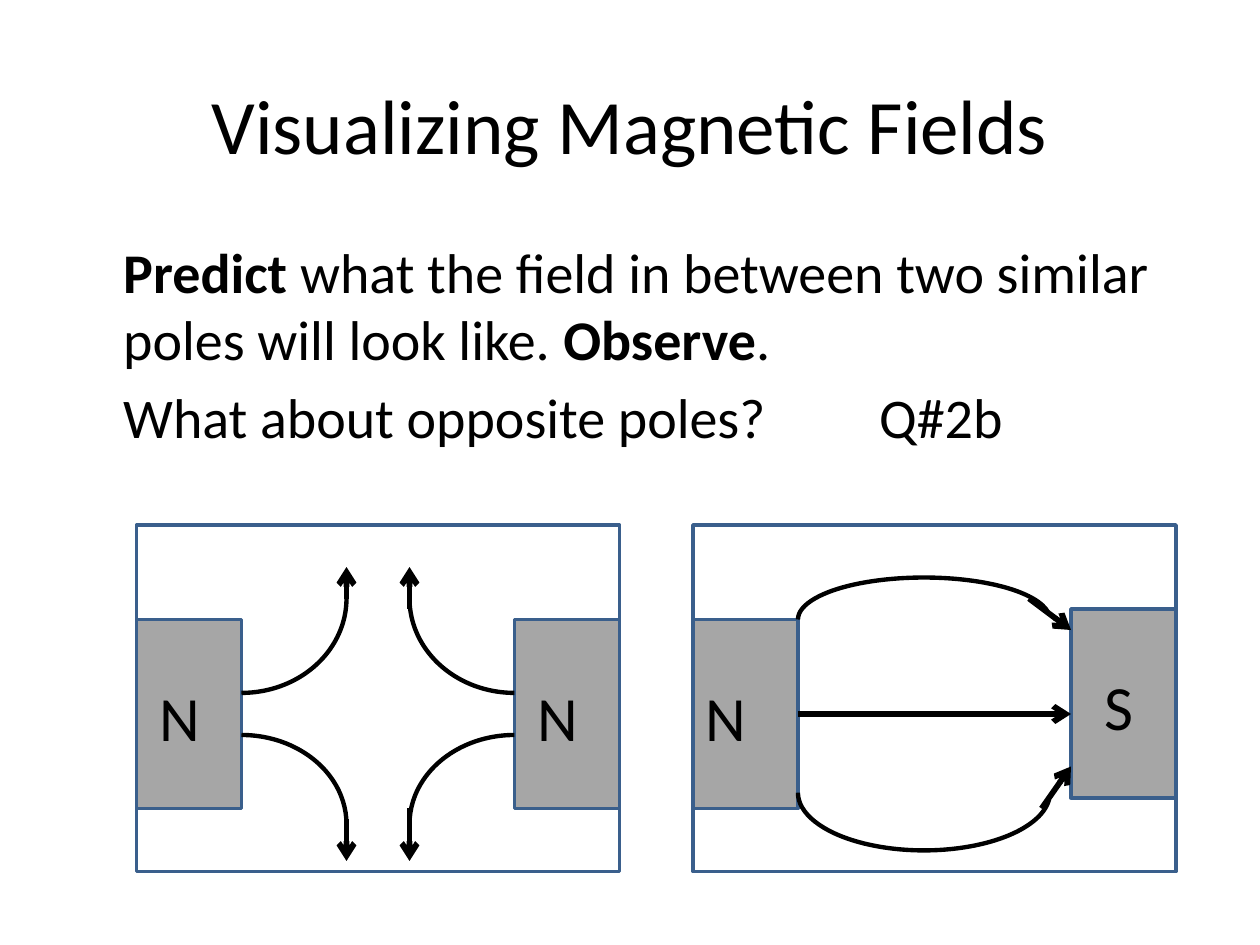
from dataclasses import dataclass
from pptx import Presentation
from pptx.dml.color import RGBColor as RGB
from pptx.enum.shapes import MSO_CONNECTOR as CXN, MSO_SHAPE as SHAPE
from pptx.enum.text import MSO_ANCHOR as ANCHOR, PP_ALIGN as ALIGN
from pptx.oxml.ns import qn
from pptx.util import Inches, Pt
from lxml.etree import SubElement


@dataclass(frozen=True)
class Theme:
    font: str = "Calibri"
    ink: RGB = RGB(0, 0, 0)
    magnet: RGB = RGB(0xA6, 0xA6, 0xA6)
    border: RGB = RGB(0x3A, 0x5F, 0x8C)
    title: int = 44
    body: int = 32
    label: int = 36
    border_width: float = 2
    curve_width: float = 2.5
    arrow_width: float = 3.25


THEME = Theme()
COLS, ROWS = 120, 90
CELL = Inches(10) / COLS
MAGNET_W, MAGNET_H = 10, 18
RIGHT_MAGNET = 36
SIMILAR_CURVES = [
    (0, 20, 20, 17, ""), (0, -2, 20, 18, "V"),
    (26, 20, 20, 17, "H"), (26, -2, 20, 18, "HV"),
]
SIMILAR_ARROWS = [
    (20, 7, 20, 4), (20, 28, 20, 32), (26, 27, 26, 32), (26, 8, 26, 4),
]
OPPOSITE_CURVES = [(10, 5, 24, 8, "H"), (10, 20, 24, 11, "HV")]
OPPOSITE_ARROWS = [(32, 7, 36, 10), (33.2, 27, 36, 23)]
HALF_TURN = 109.85


def grid(*cells):
    return [round(c * CELL) for c in cells]


def add_text(s, box, size, paragraphs, align=ALIGN.LEFT, anchor=ANCHOR.TOP,
             indent=0, space=0):
    tf = s.shapes.add_textbox(*grid(*box)).text_frame
    tf.word_wrap = True
    tf.vertical_anchor = anchor
    for i, runs in enumerate(paragraphs):
        p = tf.paragraphs[0] if i == 0 else tf.add_paragraph()
        p.alignment = align
        p.space_before = Pt(space)
        p.font.name, p.font.size = THEME.font, Pt(size)
        p.font.color.rgb = THEME.ink
        if indent:
            p._p.get_or_add_pPr().set("marL", str(Inches(indent)))
        for text, bold in runs:
            r = p.add_run()
            r.text = text
            if bold:
                r.font.bold = True


def add_rect(s, box, fill=None):
    sp = s.shapes.add_shape(SHAPE.RECTANGLE, *grid(*box))
    sp.shadow.inherit = False
    if fill is None:
        sp.fill.background()
    else:
        sp.fill.solid()
        sp.fill.fore_color.rgb = fill
    sp.line.color.rgb = THEME.border
    sp.line.width = Pt(THEME.border_width)
    return sp


def add_magnet(s, left, top, pole, shift):
    sp = add_rect(s, (left, top, MAGNET_W, MAGNET_H), THEME.magnet)
    add_text(s, (left + shift, top + 5, 9, 8.5), THEME.label, [[(pole, False)]])
    return sp


def add_curve(group, box, flip, start=None):
    sp = group.shapes.add_shape(SHAPE.ARC, *grid(*box))
    sp.shadow.inherit = False
    sp.fill.background()
    sp.line.color.rgb = THEME.ink
    sp.line.width = Pt(THEME.curve_width)
    if start is not None:
        sp.adjustments[0] = start
    for axis in flip:
        sp._element.spPr.xfrm.set("flip" + axis, "1")


def add_arrow(group, ends):
    c = group.shapes.add_connector(CXN.STRAIGHT, *grid(*ends))
    c.line.color.rgb = THEME.ink
    c.line.width = Pt(THEME.arrow_width)
    SubElement(c.line._get_or_add_ln(), qn("a:tailEnd"), type="arrow")
    SubElement(c._element.spPr, qn("a:effectLst"))
    return c


def add_field(s, left, top, curves, arrows, start=None):
    group = s.shapes.add_group_shape()
    for x, y, w, h, flip in curves:
        add_curve(group, (left + x, top + y, w, h), flip, start)
    for x1, y1, x2, y2 in arrows:
        add_arrow(group, (left + x1, top + y1, left + x2, top + y2))
    return group


def similar_poles(s, box):
    left, top, _, _ = box
    add_rect(s, box)
    for x in (0, RIGHT_MAGNET):
        add_magnet(s, left + x, top + 9, "N", 1)
    add_field(s, left, top, SIMILAR_CURVES, SIMILAR_ARROWS)


def opposite_poles(s, box):
    left, top, _, _ = box
    add_rect(s, box)
    north = add_magnet(s, left, top + 9, "N", 0)
    add_magnet(s, left + RIGHT_MAGNET, top + 8, "S", 2)
    group = add_field(s, left, top, OPPOSITE_CURVES, OPPOSITE_ARROWS, HALF_TURN)
    middle = top + 9 + MAGNET_H / 2
    c = add_arrow(group, (left + MAGNET_W, middle, left + RIGHT_MAGNET, middle))
    c.begin_connect(north, 3)


def heading(s, box):
    add_text(s, box, THEME.title, [[("Visualizing Magnetic Fields", False)]],
             ALIGN.CENTER, ANCHOR.MIDDLE)


def questions(s, box):
    add_text(s, box, THEME.body, [
        [("Predict", True),
         (" what the field in between two similar poles will look like. ", False),
         ("Observe", True), (".", False)],
        [("What about opposite poles?\t\tQ#2b", False)],
    ], indent=0.38, space=0.2 * THEME.body)


def main():
    prs = Presentation()
    prs.slide_width, prs.slide_height = grid(COLS, ROWS)
    s = prs.slides.add_slide(prs.slide_layouts[6])
    heading(s, (6, 3.6, 108, 16.4))
    questions(s, (6, 22, 108, 23))
    similar_poles(s, (13, 50, 46, 33))
    opposite_poles(s, (66, 50, 46, 33))
    prs.save("out.pptx")


if __name__ == "__main__":
    main()
